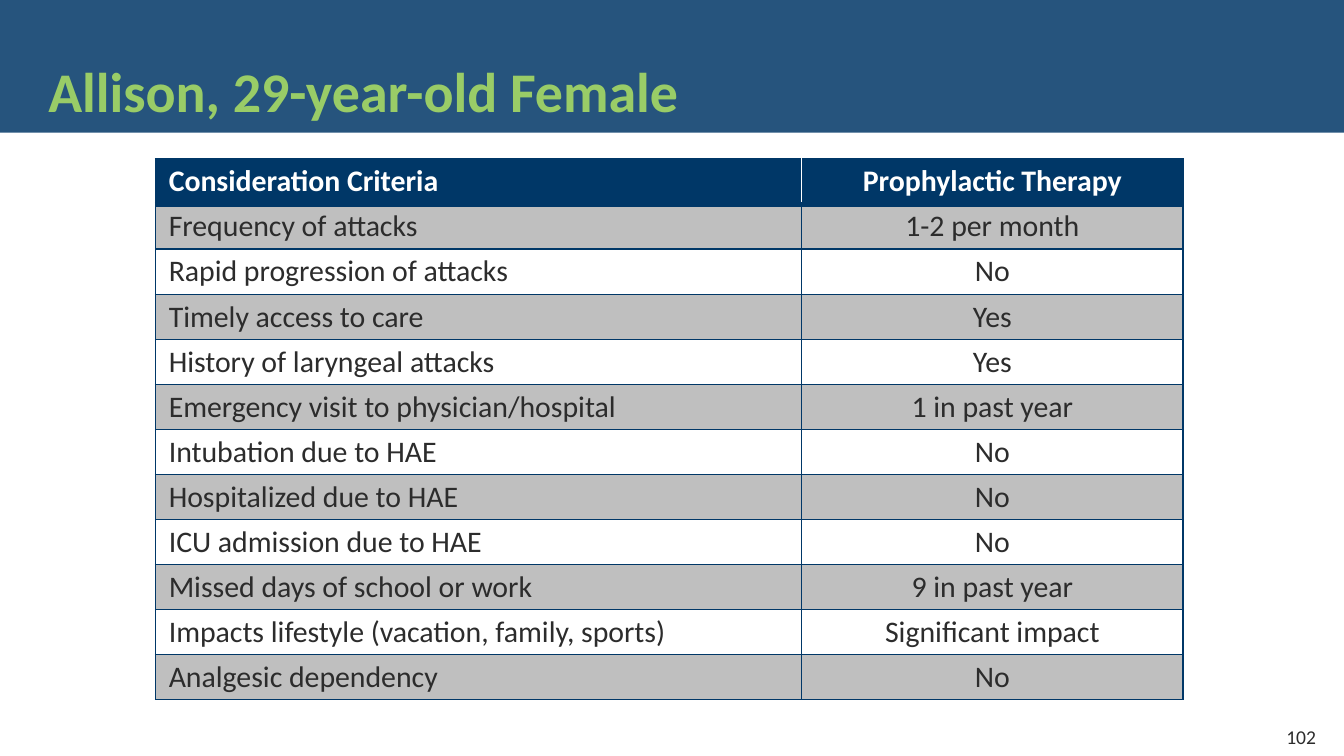
from dataclasses import dataclass

from lxml.etree import SubElement
from pptx import Presentation
from pptx.dml.color import RGBColor as RGB
from pptx.enum.shapes import MSO_SHAPE as SHAPE
from pptx.enum.text import MSO_ANCHOR as ANCHOR, PP_ALIGN as ALIGN
from pptx.oxml import parse_xml
from pptx.oxml.ns import nsdecls, qn
from pptx.util import Cm, Pt


@dataclass(frozen=True)
class Theme:
    font: str = "Calibri"
    navy: str = "003767"
    green: str = "99CC67"
    gray: str = "BFBFBF"
    white: str = "FFFFFF"
    ink: str = "2C2C2C"
    title_size: float = 30
    table_size: float = 16
    number_size: float = 10.5


THEME = Theme()

HEADER = ("Consideration Criteria", "Prophylactic Therapy")
CRITERIA = [
    ("Frequency of attacks", "1-2 per month"),
    ("Rapid progression of attacks", "No"),
    ("Timely access to care", "Yes"),
    ("History of laryngeal attacks", "Yes"),
    ("Emergency visit to physician/hospital", "1 in past year"),
    ("Intubation due to HAE", "No"),
    ("Hospitalized due to HAE", "No"),
    ("ICU admission due to HAE", "No"),
    ("Missed days of school or work", "9 in past year"),
    ("Impacts lifestyle (vacation, family, sports)", "Significant impact"),
    ("Analgesic dependency", "No"),
]


def set_font(font, size, color, bold=False):
    font.name, font.size, font.bold = THEME.font, Pt(size), bold
    font.color.rgb = RGB.from_string(color)


def place(sp, left, top, width, height):
    sp.left, sp.top, sp.width, sp.height = left, top, width, height


def add_title(slide, text, left, top, width, height):
    """Translucent band with the shadowed title at its foot."""
    title = slide.shapes.title
    band = slide.shapes.add_shape(SHAPE.RECTANGLE, left, top, width, height)
    band.shadow.inherit = False
    band.fill.solid()
    band.fill.fore_color.rgb = RGB.from_string(THEME.navy)
    color = band.fill._xPr.find(qn("a:solidFill"))[0]
    SubElement(color, qn("a:alpha"), val="85000")
    band.line.fill.background()
    title.element.addprevious(band.element)  # band behind the title

    inset = Cm(0.66)
    place(title, left + inset, top + Cm(0.61), Cm(22.71), height - Cm(0.63))
    tf = title.text_frame
    tf.word_wrap, tf.vertical_anchor = True, ANCHOR.BOTTOM
    p = tf.paragraphs[0]
    p.alignment, p.line_spacing = ALIGN.LEFT, 0.9
    r = p.add_run()
    r.text = text
    set_font(r.font, THEME.title_size, THEME.green, bold=True)
    shadow = parse_xml(
        f'<a:effectLst {nsdecls("a")}><a:outerShdw blurRad="38100" dist="38100" '
        'dir="2700000" algn="tl"><a:srgbClr val="000000"><a:alpha val="43000"/>'
        "</a:srgbClr></a:outerShdw></a:effectLst>")
    r.font._element.find(qn("a:solidFill")).addnext(shadow)


def set_borders(cell, **sides):
    """Draw cell edges from (color, points) pairs; they go before the fill."""
    tcPr = cell._tc.get_or_add_tcPr()
    for i, side in enumerate("LRTB"):
        color, points = sides.get(side, (THEME.navy, 1))
        tcPr.insert(i, parse_xml(
            f'<a:ln{side} {nsdecls("a")} w="{Pt(points)}"><a:solidFill>'
            f'<a:srgbClr val="{color}"/></a:solidFill></a:ln{side}>'))


def add_criteria_table(slide, left, top, width, height):
    rows = [HEADER, *CRITERIA]
    table = slide.shapes.add_table(
        len(rows), len(HEADER), left, top, width, height).table
    table.columns[0].width = Cm(12.21)
    table.columns[1].width = width - Cm(12.21)
    divider, rule = (THEME.white, 1), (THEME.navy, 3)

    for i, row in enumerate(rows):
        head = i == 0
        fill = THEME.navy if head else THEME.gray if i % 2 else THEME.white
        for j, text in enumerate(row):
            cell = table.cell(i, j)
            cell.margin_left = cell.margin_right = Cm(0.25)
            cell.margin_top = cell.margin_bottom = Cm(0.08)
            cell.fill.solid()
            cell.fill.fore_color.rgb = RGB.from_string(fill)
            if head:
                set_borders(cell, B=rule, **{"RL"[j]: divider})
            else:
                set_borders(cell, **({"T": rule} if i == 1 else {}))
            p = cell.text_frame.paragraphs[0]
            p.text = text
            p.alignment = ALIGN.CENTER if j else ALIGN.LEFT
            set_font(p.font, THEME.table_size,
                     THEME.white if head else THEME.ink, bold=head)


def add_page_number(slide, number, left, top, width, height):
    tf = slide.shapes.add_textbox(left, top, width, height).text_frame
    tf.word_wrap, tf.vertical_anchor = True, ANCHOR.MIDDLE
    p = tf.paragraphs[0]
    p.text, p.alignment = str(number), ALIGN.RIGHT
    set_font(p.font, THEME.number_size, THEME.ink)


def main():
    prs = Presentation()
    prs.slide_width, prs.slide_height = Cm(25.4), Cm(14.29)
    slide = prs.slides.add_slide(prs.slide_layouts[5])  # title only
    add_title(slide, "Allison, 29-year-old Female",
              0, 0, prs.slide_width, Cm(2.51))
    add_criteria_table(slide, Cm(2.94), Cm(3.01), Cm(19.42), Cm(10.12))
    add_page_number(slide, 102, Cm(23.95), Cm(13.54), Cm(1.17), Cm(0.76))
    prs.save("out.pptx")


if __name__ == "__main__":
    main()
